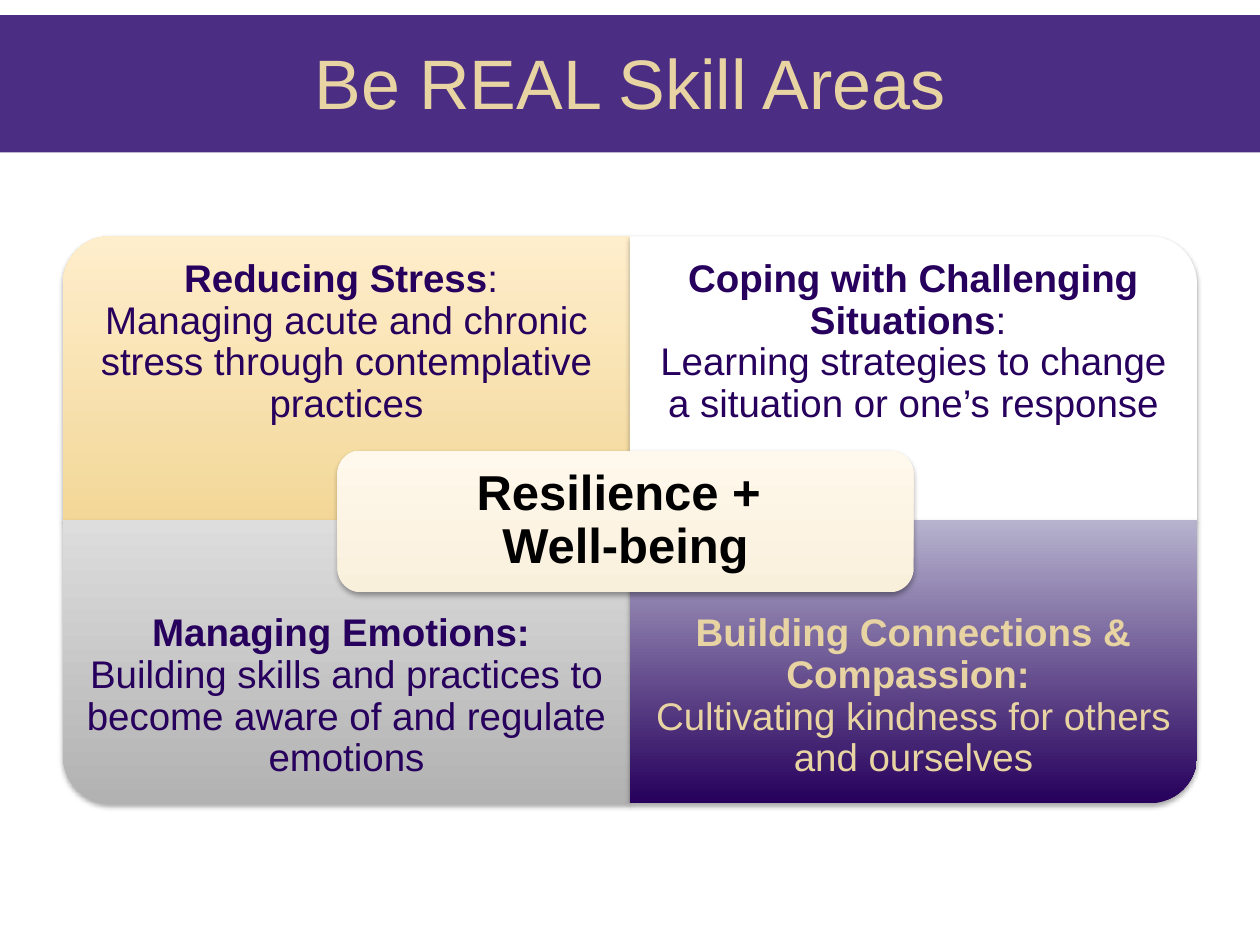
from lxml import etree
from pptx import Presentation
from pptx import util as u
from pptx.dml.color import RGBColor
from pptx.enum import shapes, text
from pptx.oxml import parse_xml

WHITE = RGBColor(0xFF, 0xFF, 0xFF)
BLACK = RGBColor(0x00, 0x00, 0x00)
PURPLE = RGBColor(0x4B, 0x2E, 0x83)
DEEP_PURPLE = RGBColor(0x26, 0x00, 0x5C)
LILAC = RGBColor(0xB7, 0xB3, 0xCE)
GOLD = RGBColor(0xE8, 0xD3, 0xA2)
SAND = RGBColor(0xF2, 0xD7, 0x98)
CREAM = RGBColor(0xFF, 0xEE, 0xCC)
DARK_GREY = RGBColor(0xB2, 0xB2, 0xB2)
LIGHT_GREY = RGBColor(0xDD, 0xDD, 0xDD)
IVORY = RGBColor(0xF9, 0xF0, 0xDC)
PALE_IVORY = RGBColor(0xFF, 0xF8, 0xEC)

FONT = "Arial"
WIDTH, HEIGHT = 10, 7.5
DRAWING_NS = "http://schemas.openxmlformats.org/drawingml/2006/main"
SHADOW = (
    f'<a:effectLst xmlns:a="{DRAWING_NS}">'
    '<a:outerShdw blurRad="39370" dist="22860" dir="5400000" rotWithShape="0">'
    '<a:srgbClr val="000000"><a:alpha val="35000"/></a:srgbClr>'
    "</a:outerShdw></a:effectLst>"
)

# column, row, turn of the rounded corner, bottom and top colour, text colour,
# then lines of (words, bold) runs
QUADRANTS = [
    (0, 0, 270, SAND, CREAM, DEEP_PURPLE,
     [[("Reducing Stress", True), (": ", False)],
      [("Managing acute and chronic stress through contemplative practices", False)]]),
    (1, 0, 0, WHITE, WHITE, DEEP_PURPLE,
     [[("Coping with Challenging Situations", True), (": ", False)],
      [("Learning strategies to change a situation or one’s response", False)]]),
    (0, 1, 180, DARK_GREY, LIGHT_GREY, DEEP_PURPLE,
     [[("Managing Emotions: ", True)],
      [("Building skills and practices to become aware of and regulate emotions", False)]]),
    (1, 1, 90, DEEP_PURPLE, LILAC, GOLD,
     [[("Building Connections & Compassion: ", True)],
      [("Cultivating kindness for others and ourselves", False)]]),
]


def add_panel(page, kind, box, bottom, top, turn=0, shadow=True):
    """Add a borderless shape that fills the box on the page after its turn."""
    left, upper, width, height = box
    if turn % 180:
        left, upper = left + (width - height) / 2, upper + (height - width) / 2
        width, height = height, width
    panel = page.shapes.add_shape(
        kind, *(u.Inches(n) for n in (left, upper, width, height)))
    panel.rotation = turn
    panel.line.fill.background()
    if bottom == top:
        panel.fill.solid()
        panel.fill.fore_color.rgb = bottom
    else:
        panel.fill.gradient()
        panel.fill.gradient_angle = 90
        for stop, colour, position in zip(panel.fill.gradient_stops, (bottom, top), (0, 1)):
            stop.color.rgb = colour
            stop.position = position
        # The gradient stays upright when the shape is turned
        properties = panel.element.spPr
        properties.find(f"{{{DRAWING_NS}}}gradFill").set("rotWithShape", "0")
    if shadow:
        panel.element.spPr.append(parse_xml(SHADOW))
    else:
        panel.shadow.inherit = False
    return panel


def add_label(page, box, lines, size, colour, inset=(0.1, 0.05), spacing=0.9):
    """Add centred text whose lines are lists of (words, bold) runs."""
    label = page.shapes.add_textbox(*(u.Inches(n) for n in box))
    frame = label.text_frame
    frame.word_wrap = True
    frame.vertical_anchor = text.MSO_ANCHOR.MIDDLE
    frame.margin_left = frame.margin_right = u.Inches(inset[0])
    frame.margin_top = frame.margin_bottom = u.Inches(inset[1])
    para = frame.paragraphs[0]
    para.alignment = text.PP_ALIGN.CENTER
    para.line_spacing = spacing
    for number, line in enumerate(lines):
        if number:
            para.add_line_break()
        for words, bold in line:
            span = para.add_run()
            span.text = words
            span.font.name = FONT
            span.font.size = u.Pt(size)
            span.font.bold = bold
            span.font.color.rgb = colour


def add_title(page, box):
    left, top, width, height = box
    add_panel(page, shapes.MSO_SHAPE.RECTANGLE, box, PURPLE, PURPLE, shadow=False)
    add_label(page, (left, top + 0.11 * height, width, 0.75 * height),
              [[("Be REAL Skill Areas", False)]], 40, GOLD, spacing=1)


def add_matrix(page, box):
    left, top, width, height = box
    cell_width, cell_height = width / 2, height / 2
    text_height = 0.75 * cell_height

    # Four quadrants, with text kept to the outer three quarters
    for column, row, turn, bottom, upper, colour, lines in QUADRANTS:
        x, y = left + column * cell_width, top + row * cell_height
        add_panel(page, shapes.MSO_SHAPE.ROUND_1_RECTANGLE,
                  (x, y, cell_width, cell_height), bottom, upper, turn)
        text_top = y + row * (cell_height - text_height)
        add_label(page, (x, text_top, cell_width, text_height),
                  lines, 22, colour, (0.17, 0.17))

    # Centre plate
    plate = (left + 0.242 * width, top + 0.378 * height, 0.508 * width, height / 4)
    add_panel(page, shapes.MSO_SHAPE.ROUNDED_RECTANGLE, plate, IVORY, PALE_IVORY)
    margin = 0.05
    add_label(page, (plate[0] + margin, plate[1] + margin,
                     plate[2] - 2 * margin, plate[3] - 2 * margin),
              [[("Resilience + ", True)], [("Well-being", True)]],
              28, BLACK, (0.12, 0.12))


def main():
    deck = Presentation()
    deck.slide_width, deck.slide_height = u.Inches(WIDTH), u.Inches(HEIGHT)
    page = deck.slides.add_slide(deck.slide_layouts[6])
    add_matrix(page, (0.05 * WIDTH, 0.25 * HEIGHT, 0.9 * WIDTH, 0.6 * HEIGHT))
    add_title(page, (0, 0.12, WIDTH, 1.09))
    deck.save("out.pptx")


if __name__ == "__main__":
    main()
